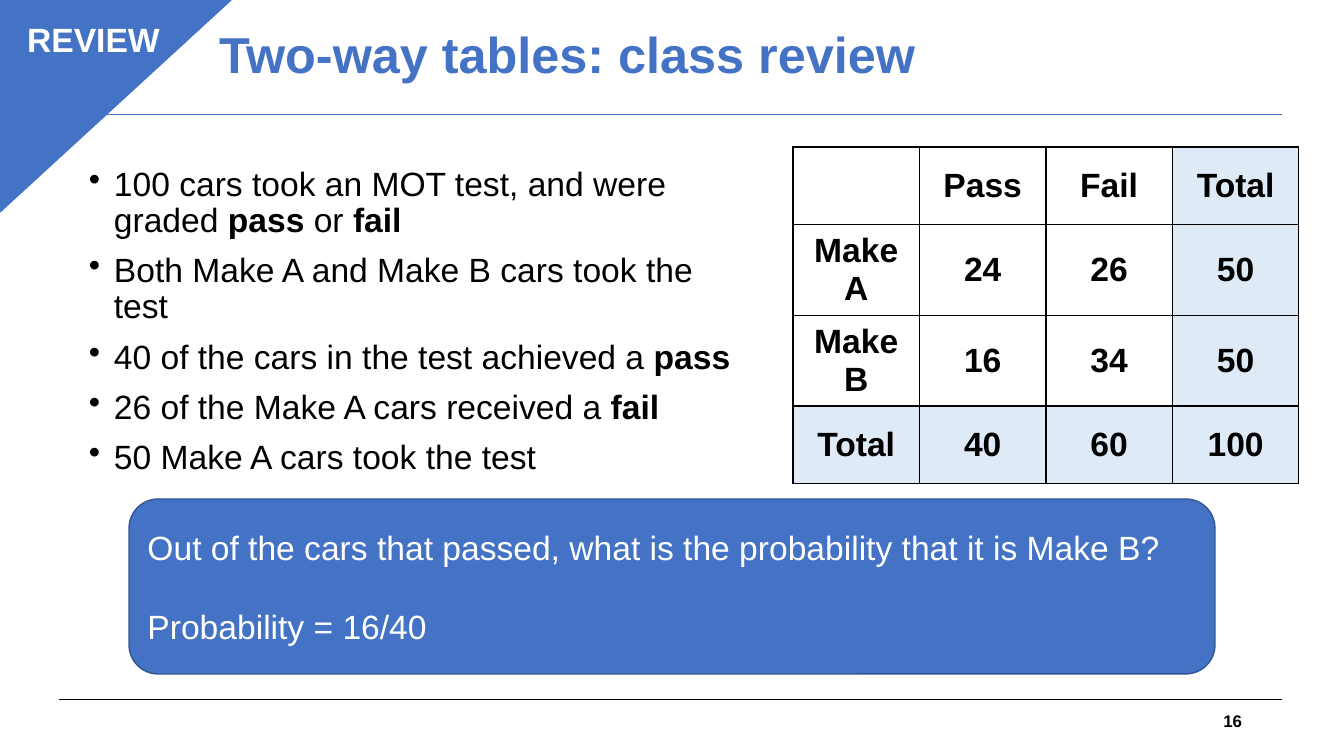
from lxml import etree
from pptx import Presentation
from pptx.dml.color import RGBColor
from pptx.enum.shapes import MSO_CONNECTOR, MSO_SHAPE
from pptx.enum.text import MSO_ANCHOR, PP_ALIGN
from pptx.oxml.ns import qn
from pptx.util import Emu, Pt

LEFT, CENTER, RIGHT = PP_ALIGN.LEFT, PP_ALIGN.CENTER, PP_ALIGN.RIGHT
TOP, MIDDLE = MSO_ANCHOR.TOP, MSO_ANCHOR.MIDDLE
STRAIGHT = MSO_CONNECTOR.STRAIGHT
TRIANGLE, ROUNDED = MSO_SHAPE.ISOSCELES_TRIANGLE, MSO_SHAPE.ROUNDED_RECTANGLE

BLUE, DARK_BLUE, PALE_BLUE = "4472C4", "325491", "DEEBF7"
BLACK, WHITE = "000000", "FFFFFF"

TITLE = "Two-way tables: class review"
TAG = "REVIEW"
PAGE_NUMBER = "16"
FACTS = [
    [("100 cars took an MOT test, and were graded ", False), ("pass", True),
     (" or ", False), ("fail", True)],
    [("Both Make A and Make B cars took the test", False)],
    [("40 of the cars in the test achieved a ", False), ("pass", True)],
    [("26 of the Make A cars received a ", False), ("fail", True)],
    [("50 Make A cars took the test", False)],
]
RESULTS = [
    ["", "Pass", "Fail", "Total"],
    ["Make A", "24", "26", "50"],
    ["Make B", "16", "34", "50"],
    ["Total", "40", "60", "100"],
]
QUESTION = [
    [("Out of the cars that passed, what is the probability that it is Make B?", False)],
    [("Probability = 16/40", False)],
]
RULES = [(59, 1282, 700, BLACK), (59, 1282, 115, BLUE)]

TITLE_BOX = (209, 11, 1042, 93)
CORNER_BOX = (0, 0, 231, 212)
TAG_BOX = (0, 14, 187, 50)
FACTS_BOX = (79, 162, 682, 223)
TABLE_BOX = (793, 147, 506, 310)
QUESTION_BOX = (129, 499, 1086, 175)
NUMBER_BOX = (950, 701, 302, 40)


def px(value):
    return Emu(round(value * 914400 / 100.8))


def place(bounds):
    return [px(value) for value in bounds]


def color(value):
    return RGBColor.from_string(value)


def write(frame, paragraphs, size, ink, anchor=TOP, **paragraph_format):
    frame.word_wrap = True
    frame.vertical_anchor = anchor
    for index, spans in enumerate(paragraphs):
        para = frame.paragraphs[0] if index == 0 else frame.add_paragraph()
        for name, value in paragraph_format.items():
            setattr(para, name, value)
        for text, bold in spans:
            span = para.add_run()
            span.text = text
            look = {"name": "Arial", "size": Pt(size), "bold": bold}
            for name, value in look.items():
                setattr(span.font, name, value)
            span.font.color.rgb = color(ink)


def add_text(page, bounds, *text, **paragraph_format):
    box = page.shapes.add_textbox(*place(bounds))
    write(box.text_frame, *text, **paragraph_format)
    return box


def add_block(page, kind, bounds, outline):
    block = page.shapes.add_shape(kind, *place(bounds))
    block.shadow.inherit = False
    block.fill.solid()
    block.fill.fore_color.rgb = color(BLUE)
    block.line.color.rgb = color(outline)
    block.line.width = Pt(1)
    return block


def add_rule(page, left, right, y, ink):
    rule = page.shapes.add_connector(STRAIGHT, *place((left, y, right, y)))
    rule.line.color.rgb = color(ink)
    rule.line.width = Pt(0.75)
    etree.SubElement(rule.element.spPr, qn("a:effectLst"))


def add_bullets(frame):
    for para in frame.paragraphs:
        properties = para._p.get_or_add_pPr()
        properties.set("marL", str(px(25)))
        properties.set("indent", str(px(-25)))
        etree.SubElement(properties, qn("a:buChar"), char="•")


def add_borders(cell):
    properties = cell._tc.get_or_add_tcPr()
    for side in ("lnL", "lnR", "lnT", "lnB"):
        edge = etree.SubElement(properties, qn(f"a:{side}"), w=str(Pt(1)))
        fill = etree.SubElement(edge, qn("a:solidFill"))
        etree.SubElement(fill, qn("a:srgbClr"), val=BLACK)


def add_results(page):
    count = len(RESULTS)
    table = page.shapes.add_table(count, count, *place(TABLE_BOX)).table
    table.first_row = table.horz_banding = False
    for row, values in enumerate(RESULTS):
        for column, value in enumerate(values):
            cell = table.cell(row, column)
            add_borders(cell)
            if count - 1 in (row, column):
                cell.fill.solid()
                cell.fill.fore_color.rgb = color(PALE_BLUE)
            else:
                cell.fill.background()
            cell.vertical_anchor = MIDDLE
            if value:
                write(cell.text_frame, [[(value, True)]], 24, BLACK, MIDDLE, alignment=CENTER)


def main():
    deck = Presentation()
    deck.slide_width, deck.slide_height = px(1344), px(756)
    page = deck.slides.add_slide(deck.slide_layouts[5])

    for rule in RULES:
        add_rule(page, *rule)

    title = page.shapes.title
    title.left, title.top, title.width, title.height = place(TITLE_BOX)
    write(title.text_frame, [[(TITLE, True)]], 36, BLUE, MIDDLE,
          alignment=LEFT, line_spacing=0.9)

    corner = add_block(page, TRIANGLE, CORNER_BOX, BLUE)
    corner.adjustments[0] = 0
    corner.element.spPr.xfrm.set("flipV", "1")
    add_text(page, TAG_BOX, [[(TAG, True)]], 24, WHITE, alignment=CENTER)

    facts = add_text(page, FACTS_BOX, FACTS, 24, BLACK,
                     line_spacing=0.9, space_before=Pt(10))
    add_bullets(facts.text_frame)
    add_results(page)

    question = add_block(page, ROUNDED, QUESTION_BOX, DARK_BLUE)
    write(question.text_frame, QUESTION, 24, WHITE, MIDDLE, alignment=LEFT)
    question.text_frame.paragraphs[1].space_before = Pt(28)

    add_text(page, NUMBER_BOX, [[(PAGE_NUMBER, True)]], 12, BLACK, MIDDLE, alignment=RIGHT)
    deck.save("out.pptx")


if __name__ == "__main__":
    main()
